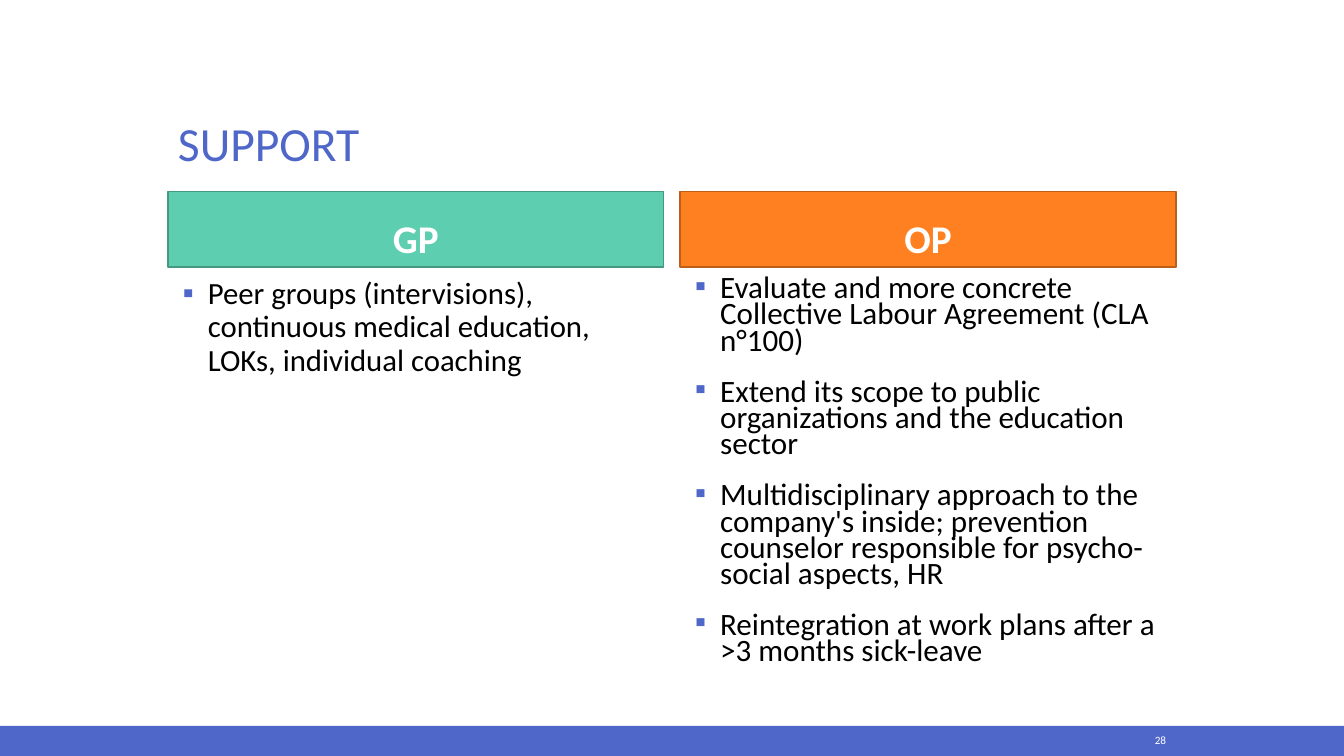
"""Builds the SUPPORT slide, which compares GP and OP in two columns."""
from lxml import etree
from pptx import Presentation
from pptx.dml.color import RGBColor
from pptx.enum.shapes import MSO_SHAPE
from pptx.enum.text import MSO_ANCHOR, MSO_AUTO_SIZE, PP_ALIGN
from pptx.oxml.ns import qn
from pptx.util import Cm, Pt

RECTANGLE = MSO_SHAPE.RECTANGLE
TOP, MIDDLE, BOTTOM = MSO_ANCHOR.TOP, MSO_ANCHOR.MIDDLE, MSO_ANCHOR.BOTTOM
LEFT, CENTER, RIGHT = PP_ALIGN.LEFT, PP_ALIGN.CENTER, PP_ALIGN.RIGHT
NO_FIT = MSO_AUTO_SIZE.NONE

WHITE = RGBColor(0xFF, 0xFF, 0xFF)
BLACK = RGBColor(0x00, 0x00, 0x00)
BLUE = RGBColor(0x4E, 0x67, 0xC8)
GREEN = RGBColor(0x5D, 0xCE, 0xAF)
GREEN_EDGE = RGBColor(0x45, 0x98, 0x81)
ORANGE = RGBColor(0xFF, 0x80, 0x21)
ORANGE_EDGE = RGBColor(0xBD, 0x5F, 0x18)

FONT = "Calibri"
SLIDE_WIDTH, SLIDE_HEIGHT = Cm(33.87), Cm(19.05)
MARGIN = Cm(4.23)
CONTENT_WIDTH = SLIDE_WIDTH - 2 * MARGIN
GAP = Cm(0.41)
COLUMN_WIDTH = (CONTENT_WIDTH - GAP) // 2
COLUMN_TOP, COLUMN_HEIGHT = Cm(4.83), Cm(12.5)
HEADER_HEIGHT = Cm(1.9)
BODY_OFFSET = Cm(2.05)
FOOTER_HEIGHT = Cm(0.76)

COLUMNS = [
    ("GP", GREEN, GREEN_EDGE, 22, 0.9, [
        "Peer groups (intervisions), continuous medical education, LOKs, individual coaching",
    ]),
    ("OP", ORANGE, ORANGE_EDGE, 22.2, 0.7, [
        "Evaluate and more concrete Collective Labour Agreement (CLA n°100)",
        "Extend its scope to public organizations and the education sector",
        "Multidisciplinary approach to the company's inside; prevention counselor "
        "responsible for psycho-social aspects, HR",
        "Reintegration at work plans after a >3 months sick-leave",
    ]),
]


def write_text(shape, lines, size, color, align=LEFT, anchor=TOP, spacing=1.0, bold=False):
    """Write one paragraph per line and format them all alike."""
    frame = shape.text_frame
    frame.text = "\n".join(lines)
    frame.word_wrap = True
    frame.auto_size = NO_FIT
    frame.vertical_anchor = anchor
    for paragraph in frame.paragraphs:
        paragraph.alignment = align
        paragraph.line_spacing = spacing
        for span in paragraph.runs:
            span.font.name = FONT
            span.font.size = Pt(size)
            span.font.bold = bold
            span.font.color.rgb = color


def add_bullet(paragraph):
    """Give a paragraph a hanging blue square bullet."""
    paragraph.space_before = Pt(18)
    properties = paragraph._p.get_or_add_pPr()
    properties.set("marL", str(Cm(0.76)))
    properties.set("indent", str(-Cm(0.63)))
    bullet_color = etree.SubElement(properties, qn("a:buClr"))
    etree.SubElement(bullet_color, qn("a:srgbClr"), val=str(BLUE))
    etree.SubElement(properties, qn("a:buFont"), typeface=FONT)
    etree.SubElement(properties, qn("a:buChar"), char="▪")


def add_rectangle(page, left, top, width, height, fill):
    """Add a flat filled rectangle without an outline."""
    box = page.shapes.add_shape(RECTANGLE, left, top, width, height)
    box.shadow.inherit = False
    box.fill.solid()
    box.fill.fore_color.rgb = fill
    box.line.fill.background()
    return box


def add_title(page, left, top, width, height):
    """Place and format the slide title."""
    title = page.shapes.title
    title.left, title.top, title.width, title.height = left, top, width, height
    write_text(title, ["SUPPORT"], 34, BLUE, anchor=BOTTOM, spacing=0.9)


def add_column(page, left, top, width, height, column):
    """Add a coloured header with its bulleted list below."""
    heading, fill, edge, size, spacing, points = column
    header = add_rectangle(page, left, top, width, HEADER_HEIGHT, fill)
    header.line.color.rgb = edge
    header.line.width = Pt(1)
    write_text(header, [heading], 28, WHITE, CENTER, BOTTOM, 0.9, True)
    body = page.shapes.add_textbox(left, top + BODY_OFFSET, width, height - BODY_OFFSET)
    write_text(body, points, size, BLACK, spacing=spacing)
    for paragraph in body.text_frame.paragraphs:
        add_bullet(paragraph)


def add_footer(page, left, top, width, height):
    """Add the bottom band with the page number at the right margin."""
    add_rectangle(page, left, top, width, height, BLUE)
    number_width = Cm(2.16)
    number_left = left + width - MARGIN - number_width
    number = page.shapes.add_textbox(number_left, top + Cm(0.05), number_width, Cm(0.64))
    write_text(number, ["28"], 8, WHITE, RIGHT, MIDDLE)


def main():
    """Build and save the deck."""
    deck = Presentation()
    deck.slide_width, deck.slide_height = SLIDE_WIDTH, SLIDE_HEIGHT
    page = deck.slides.add_slide(deck.slide_layouts.get_by_name("Title Only"))
    add_footer(page, 0, SLIDE_HEIGHT - FOOTER_HEIGHT, SLIDE_WIDTH, FOOTER_HEIGHT)
    add_title(page, MARGIN, Cm(1.27), CONTENT_WIDTH, Cm(3.18))
    for index, column in enumerate(COLUMNS):
        left = MARGIN + index * (COLUMN_WIDTH + GAP)
        add_column(page, left, COLUMN_TOP, COLUMN_WIDTH, COLUMN_HEIGHT, column)
    deck.save("out.pptx")


if __name__ == "__main__":
    main()
